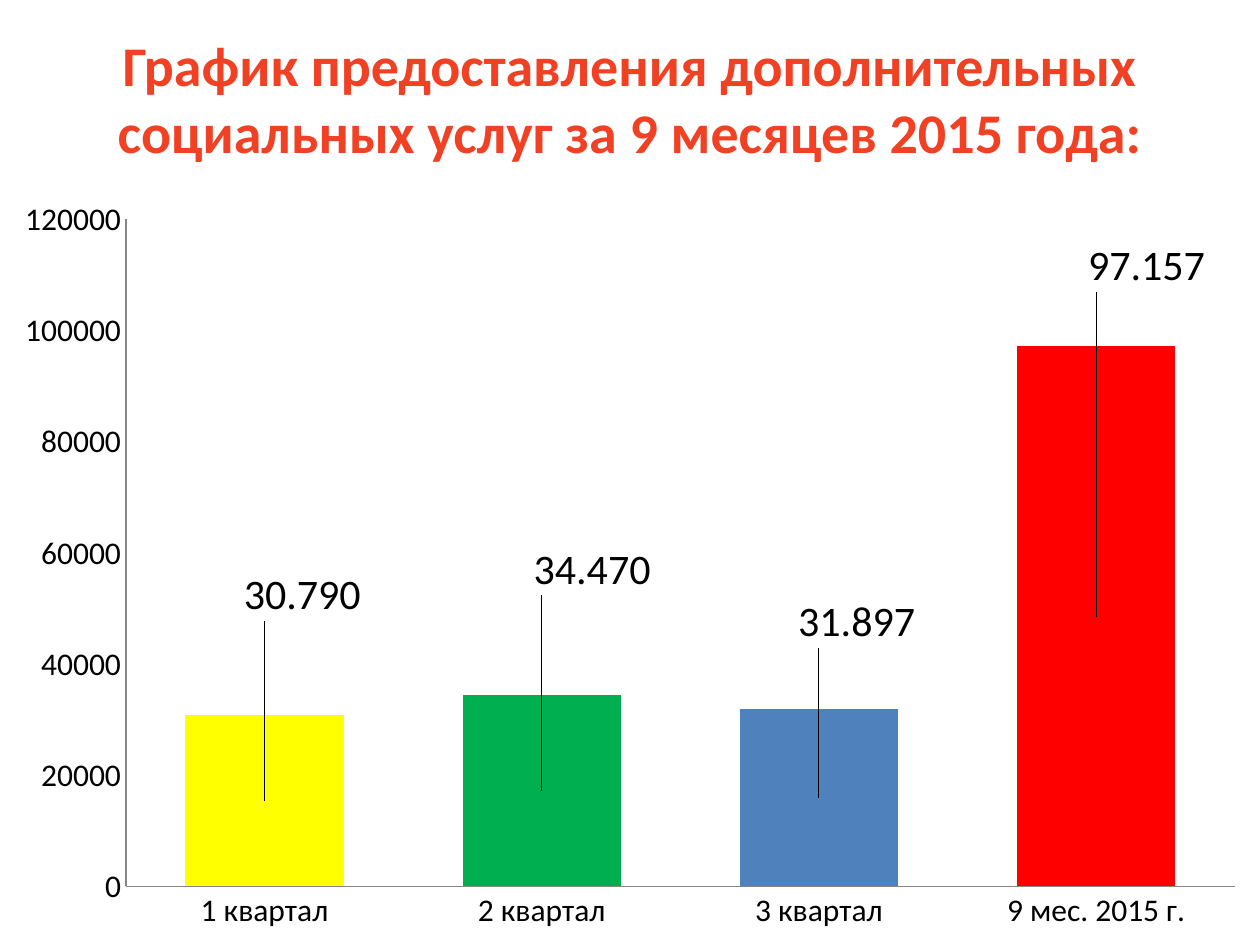
from dataclasses import dataclass

from lxml import etree
from pptx import Presentation
from pptx.chart.data import CategoryChartData
from pptx.dml.color import RGBColor
from pptx.enum.chart import XL_CHART_TYPE as ChartType, XL_TICK_MARK as TickMark
from pptx.enum.text import MSO_ANCHOR as Anchor, PP_ALIGN as Align
from pptx.oxml.ns import qn
from pptx.util import Inches, Pt

BLACK = RGBColor(0x00, 0x00, 0x00)
GRAY = RGBColor(0x86, 0x86, 0x86)
ORANGE = RGBColor(0xF1, 0x41, 0x24)
YELLOW = RGBColor(0xFF, 0xFF, 0x00)
GREEN = RGBColor(0x00, 0xB0, 0x50)
BLUE = RGBColor(0x4F, 0x81, 0xBD)
RED = RGBColor(0xFF, 0x00, 0x00)

# Category, value, label, bar colour, label shift as a share of the chart size
QUARTERS = [
    ("1 квартал", 30790, "30.790", YELLOW, (0.03, -0.27)),
    ("2 квартал", 34470, "34.470", GREEN, (0.04, -0.29)),
    ("3 квартал", 31897, "31.897", BLUE, (0.03, -0.23)),
    ("9 мес. 2015 г.", 97157, "97.157", RED, (0.04, -0.46)),
]


def manual_layout(**values):
    """Return a c:layout element; None stands for no value attribute pairs."""
    layout = etree.Element(qn("c:layout"))
    manual = etree.SubElement(layout, qn("c:manualLayout"))
    for name, value in values.items():
        etree.SubElement(manual, qn(f"c:{name}")).set("val", str(value))
    return layout


@dataclass
class SlideBuilder:
    page: object
    font_name: str = "Calibri"

    def style(self, font, size, color, bold=False):
        formats = {"name": self.font_name, "size": Pt(size), "bold": bold}
        for name, value in formats.items():
            setattr(font, name, value)
        font.color.rgb = color

    def title(self, text, left, top, width, height):
        box = self.page.shapes.title
        places = {"left": left, "top": top, "width": width, "height": height}
        for name, value in places.items():
            setattr(box, name, Inches(value))
        frame = box.text_frame
        frame.word_wrap = True
        frame.vertical_anchor = Anchor.MIDDLE
        para = frame.paragraphs[0]
        para.alignment = Align.CENTER
        span = para.add_run()
        span.text = text
        self.style(span.font, 32, ORANGE, bold=True)

    def column_chart(self, rows, *place):
        data = CategoryChartData()
        data.categories = [row[0] for row in rows]
        data.add_series("Series 1", [row[1] for row in rows])
        chart = self.page.shapes.add_chart(
            ChartType.COLUMN_STACKED, *map(Inches, place), data
        ).chart
        chart.has_legend = False
        chart.has_title = False
        self.style(chart.font, 18, BLACK)
        for axis in (chart.category_axis, chart.value_axis):
            axis.has_major_gridlines = False
            axis.major_tick_mark = axis.minor_tick_mark = TickMark.NONE
            axis.format.line.color.rgb = GRAY
        chart.value_axis.minimum_scale = 0
        chart.value_axis.maximum_scale = 120000
        chart.value_axis.major_unit = 20000

        plot = chart.plots[0]
        plot.gap_width, plot.overlap = 75, 100
        plot.vary_by_categories = False
        self.color_bars(plot.series[0], rows)
        self.place_parts(chart, [row[4] for row in rows])

    def color_bars(self, series, rows):
        series.format.fill.solid()
        series.format.fill.fore_color.rgb = BLUE
        series.data_labels.show_value = True
        self.style(series.data_labels.font, 24, BLACK)
        for index, (_, _, label, color, _) in enumerate(rows):
            point = series.points[index]
            point.format.fill.solid()
            point.format.fill.fore_color.rgb = color
            span = point.data_label.text_frame.paragraphs[0].add_run()
            span.text = label
            self.style(span.font, 24, BLACK)

    def place_parts(self, chart, shifts):
        """Fix the plot area and move each label away from its bar."""
        root = chart._chartSpace
        area = root.find(".//" + qn("c:plotArea"))
        for old in area.findall(qn("c:layout")):
            area.remove(old)
        area.insert(0, manual_layout(
            layoutTarget="inner", xMode="edge", yMode="edge",
            x=0.1, y=0.045, w=0.88, h=0.878,
        ))
        for label, (x, y) in zip(root.iter(qn("c:dLbl")), shifts):
            label.find(qn("c:idx")).addnext(manual_layout(x=x, y=y))


def main():
    deck = Presentation()
    deck.slide_width, deck.slide_height = Inches(10), Inches(7.5)
    builder = SlideBuilder(deck.slides.add_slide(deck.slide_layouts[5]))
    builder.title(
        "График предоставления дополнительных социальных услуг "
        "за 9 месяцев 2015 года:",
        0, 0, 10, 1.55,
    )
    builder.column_chart(QUARTERS, 0, 1.47, 10, 6.03)
    deck.save("out.pptx")


if __name__ == "__main__":
    main()
